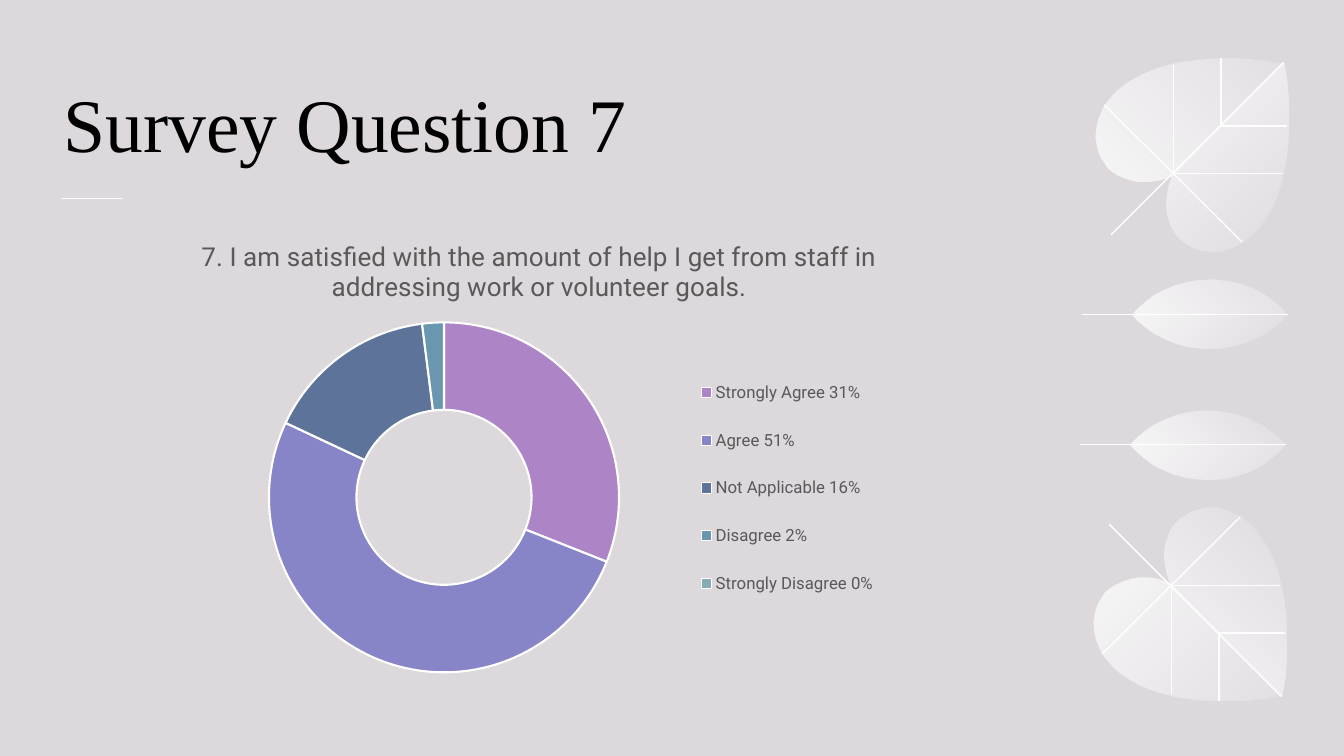
"""Build the survey question 7 slide with a doughnut chart and a leaf border."""
from dataclasses import dataclass

from lxml.etree import SubElement
from pptx import Presentation
from pptx.chart.data import CategoryChartData
from pptx.dml.color import RGBColor
from pptx.enum.chart import XL_CHART_TYPE, XL_LEGEND_POSITION
from pptx.enum.shapes import MSO_CONNECTOR
from pptx.enum.text import MSO_ANCHOR, MSO_AUTO_SIZE, PP_ALIGN
from pptx.oxml import parse_xml
from pptx.oxml.ns import nsdecls, qn
from pptx.util import Inches, Pt


@dataclass(frozen=True)
class Theme:
    background: str = "DCD8DC"
    white: str = "FFFFFF"
    title: str = "000000"
    text: str = "595959"
    slices: tuple = ("AD84C6", "8784C7", "5D739A", "6997AF", "84ACB6")
    title_font: str = "Times New Roman"
    body_font: str = "Roboto"
    title_size: float = 54
    chart_title_size: float = 18.6
    legend_size: float = 12
    base_size: float = 10
    vein_width: float = 1
    slice_border: float = 1.5


QUESTION = "7. I am satisfied with the amount of help I get from staff in addressing work or volunteer goals."
ANSWERS = {
    "Strongly Agree 31%": 31,
    "Agree 51%": 51,
    "Not Applicable 16%": 16,
    "Disagree 2%": 2,
    "Strongly Disagree 0%": 0,
}
STEMS = [((12.73, 0.62), (11.02, 2.33)), ((10.95, 1.04), (12.32, 2.4))]
VEINS = [
    [(12.72, 1.72), (11.64, 1.72), (11.64, 0.64)],
    [(12.77, 1.25), (12.11, 1.25), (12.11, 0.58)],
]
MIDRIB = ((10.73, 3.12), (12.77, 3.12))
LEAVES = [
    (45, 20, [(12.73, 0.63), (11.62, 1.74), (11.51, 1.78),
              (11.29, 1.83, 11.11, 1.77, 10.99, 1.66),
              (10.98, 1.65, 10.96, 1.63, 10.95, 1.61),
              (10.67, 1.24, 11.01, 0.44, 12.55, 0.6)]),
    (315, 10, [(12.73, 0.62), (12.76, 0.8),
               (12.92, 2.34, 12.12, 2.69, 11.75, 2.4),
               (11.6, 2.3, 11.53, 2.1, 11.59, 1.84),
               (11.63, 1.73), (11.62, 1.74)]),
    (45, 20, [(11.99, 2.77), (11.69, 2.77, 11.41, 2.9, 11.22, 3.12), (12.77, 3.12),
              (12.58, 2.9, 12.31, 2.77, 11.99, 2.77)]),
    (315, 10, [(12.77, 3.12), (11.22, 3.12), (11.41, 3.33, 11.69, 3.46, 11.99, 3.46),
               (12.31, 3.46, 12.58, 3.33, 12.77, 3.12)]),
]


def rgb(color):
    return RGBColor.from_string(color)


def mirrored(point):
    return point[0] - 0.02, 7.53 - point[1]


def unchanged(point):
    return point


class SlideBuilder:
    def __init__(self, slide, theme):
        self.s, self.theme = slide, theme
        slide.background.fill.solid()
        slide.background.fill.fore_color.rgb = rgb(theme.background)

    def style_line(self, line, width):
        line.color.rgb = rgb(self.theme.white)
        line.width = Pt(width)

    def line(self, shapes, start, end):
        ends = (Inches(v) for v in (*start, *end))
        sp = shapes.add_connector(MSO_CONNECTOR.STRAIGHT, *ends)
        self.style_line(sp.line, self.theme.vein_width)
        SubElement(sp._element.spPr, qn("a:effectLst"))

    def outline(self, shapes, points, closed):
        points = [(Inches(x), Inches(y)) for x, y in points]
        builder = shapes.build_freeform(*points[0])
        builder.add_line_segments(points[1:], close=closed)
        sp = builder.convert_to_shape()
        sp.shadow.inherit = False
        return sp

    def vein(self, shapes, points):
        sp = self.outline(shapes, points, False)
        sp.fill.background()
        self.style_line(sp.line, self.theme.vein_width)

    def curve(self, sp, segments):
        steps = iter(list(sp._element.spPr.iter(qn("a:lnTo"))))
        for seg in segments[1:]:
            step = next(steps)
            if len(seg) == 6:
                bezier = parse_xml(f'<a:cubicBezTo {nsdecls("a")}/>')
                step.addprevious(bezier)
                for control in (step, next(steps), next(steps)):
                    bezier.append(control[0])
                    control.getparent().remove(control)

    def leaf(self, shapes, segments, place, angle, end_alpha):
        points = [place(seg[i:i + 2]) for seg in segments for i in range(0, len(seg), 2)]
        sp = self.outline(shapes, points, True)
        self.curve(sp, segments)
        sp.line.fill.background()
        sp.fill.gradient()
        sp.fill.gradient_angle = angle
        for stop in sp.fill.gradient_stops:
            stop.color.rgb = rgb(self.theme.white)
        colors = sp._element.spPr.iter(qn("a:srgbClr"))
        for color, alpha in zip(colors, (80, end_alpha)):
            SubElement(color, qn("a:alpha"), val=str(alpha * 1000))

    def foliage(self, place, flipped):
        shapes = self.s.shapes.add_group_shape().shapes
        for stem in STEMS:
            self.line(shapes, *map(place, stem))
        for vein in VEINS:
            self.vein(shapes, map(place, vein))
        for angle, alpha, segments in LEAVES:
            self.leaf(shapes, segments, place, 360 - angle if flipped else angle, alpha)
        self.line(shapes, *map(place, MIDRIB))

    def title(self, text, left, top, width, height):
        sp = self.s.shapes.title
        sp.left, sp.top, sp.width, sp.height = map(Inches, (left, top, width, height))
        tf = sp.text_frame
        tf.text = text
        tf.word_wrap = True
        tf.auto_size = MSO_AUTO_SIZE.NONE
        tf.vertical_anchor = MSO_ANCHOR.BOTTOM
        tf.margin_left = 0
        p = tf.paragraphs[0]
        p.alignment = PP_ALIGN.LEFT
        self.font(p.font, self.theme.title_font, self.theme.title_size, self.theme.title)

    def font(self, font, name, size, color):
        font.name, font.size, font.bold = name, Pt(size), False
        font.color.rgb = rgb(color)

    def layout(self, element, box, inner=False):
        for old in element.findall(qn("c:layout")):
            element.remove(old)
        target = '<c:layoutTarget val="inner"/>' if inner else ""
        modes = "".join(f'<c:{k}Mode val="edge"/>' for k in "xy")
        sizes = "".join(f'<c:{k} val="{v}"/>' for k, v in zip("xywh", box))
        xml = f'<c:layout {nsdecls("c")}><c:manualLayout>{target}{modes}{sizes}</c:manualLayout></c:layout>'
        element.insert(0 if inner else 1, parse_xml(xml))

    def doughnut(self, question, answers, left, top, width, height):
        th = self.theme
        data = CategoryChartData()
        data.categories = list(answers)
        data.add_series(question, list(answers.values()))
        box = map(Inches, (left, top, width, height))
        chart = self.s.shapes.add_chart(XL_CHART_TYPE.DOUGHNUT, *box, data).chart
        self.font(chart.font, th.body_font, th.base_size, th.title)
        chart.has_title = True
        tf = chart.chart_title.text_frame
        tf.text = question
        self.font(tf.paragraphs[0].font, th.body_font, th.chart_title_size, th.text)
        chart.chart_title.include_in_layout = False
        chart.has_legend = True
        chart.legend.position = XL_LEGEND_POSITION.RIGHT
        chart.legend.include_in_layout = False
        self.font(chart.legend.font, th.body_font, th.legend_size, th.text)
        plot = chart.plots[0]
        plot.vary_by_categories = True
        for i, color in enumerate(th.slices):
            fmt = plot.series[0].points[i].format
            fmt.fill.solid()
            fmt.fill.fore_color.rgb = rgb(color)
            self.style_line(fmt.line, th.slice_border)
        root = chart._chartSpace
        next(root.iter(qn("c:holeSize"))).set("val", "75")
        self.layout(next(root.iter(qn("c:plotArea"))), (0.21, 0.22, 0.38, 0.75), inner=True)
        self.layout(next(root.iter(qn("c:legend"))), (0.66, 0.29, 0.2, 0.57))


def main():
    prs = Presentation()
    prs.slide_width, prs.slide_height = Inches(13.33), Inches(7.5)
    slide = SlideBuilder(prs.slides.add_slide(prs.slide_layouts[5]), Theme())
    slide.foliage(unchanged, False)
    slide.line(slide.s.shapes, (0.62, 1.97), (1.21, 1.97))
    slide.foliage(mirrored, True)
    slide.title("Survey Question 7", 0.63, 0.41, 9.46, 1.3)
    slide.doughnut(QUESTION, ANSWERS, 0.62, 2.18, 9.46, 4.63)
    prs.save("out.pptx")


if __name__ == "__main__":
    main()
